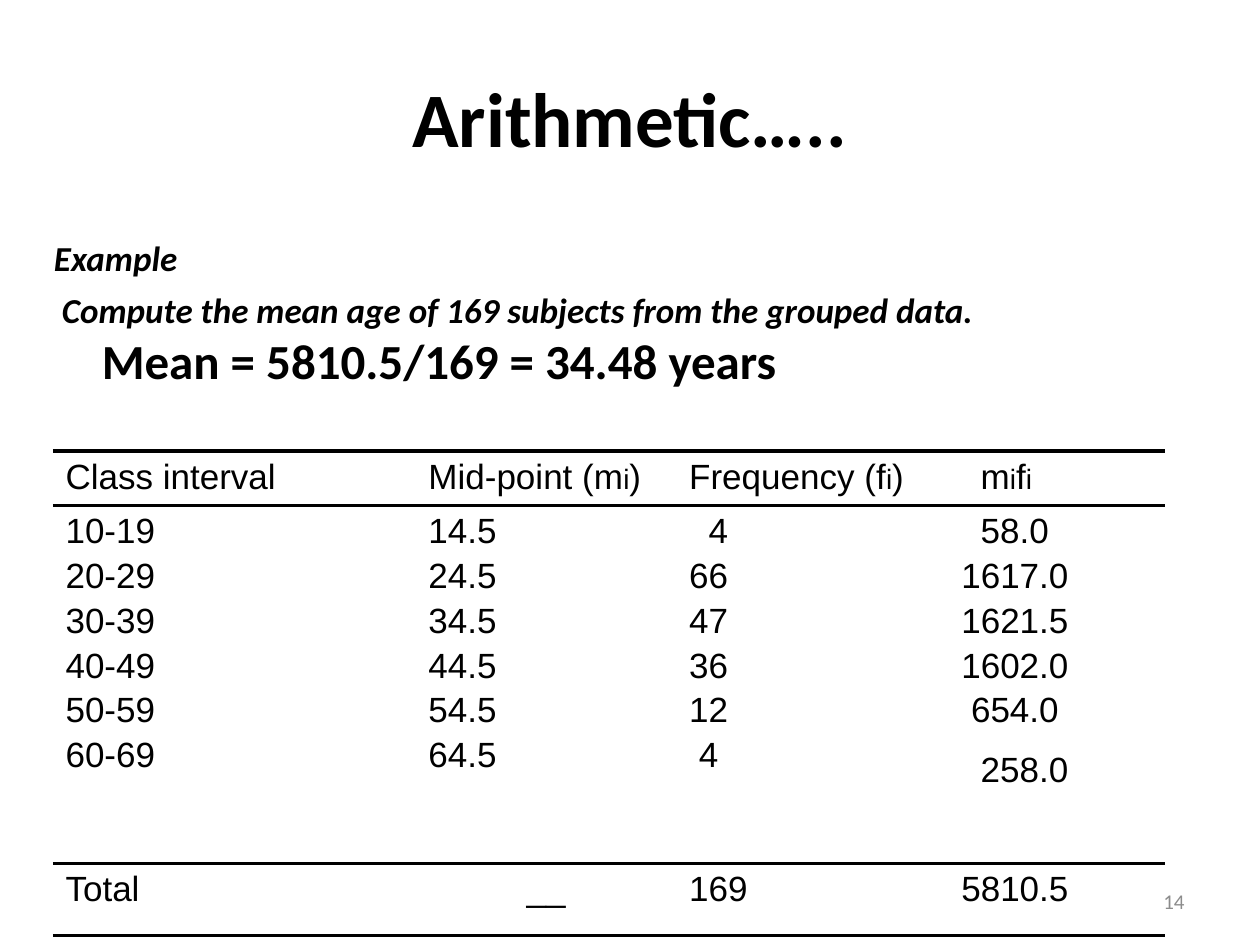
import pptx
import pptx.util
import pptx.dml.color
import pptx.enum.text
import pptx.oxml
import pptx.oxml.ns

Inches, Pt = pptx.util.Inches, pptx.util.Pt
ALIGN = pptx.enum.text.PP_ALIGN
ANCHOR = pptx.enum.text.MSO_ANCHOR

# Content: a paragraph is a list of (text, size) runs
title = "Arithmetic….."
lead = [
    [("Example", 20)],
    [(" Compute the mean age of 169 subjects from the grouped data.\v", 20),
     ("Mean = 5810.5/169 = 34.48 years", 28)],
]
heads = [
    [("Class interval", 20)],
    [("Mid-point (m", 20), ("i", 16), (")", 20)],
    [("Frequency (f", 20), ("i", 16), (")", 20)],
    [("m", 20), ("i", 16), ("f", 20), ("i", 16)],
]
data = [
    ("10-19", "14.5", "4", "58.0"),
    ("20-29", "24.5", "66", "1617.0"),
    ("30-39", "34.5", "47", "1621.5"),
    ("40-49", "44.5", "36", "1602.0"),
    ("50-59", "54.5", "12", "654.0"),
    ("60-69", "64.5", "4", "258.0"),
]
total = ("Total", "__", "169", "5810.5")
# Indents of the numbers, in steps of one digit gap
pads = {2: [2, 0, 0, 0, 0, 1], 3: [2, 0, 0, 0, 1, 2]}
step = 0.077
widths = [2.88, 2.07, 2.16, 1.72]
heights = [0.41, 2.84, 0.57]


def paint(text):
    return pptx.dml.color.RGBColor.from_string(text)


def put(frame, paras, font="Arial", color="000000", bold=False, ital=(),
        align=ALIGN.LEFT, gap=0, left=None, hang=0):
    """Write paragraphs; ital lists the sizes that are set in italics."""
    for n, runs in enumerate(paras):
        para = frame.paragraphs[0] if n == 0 else frame.add_paragraph()
        para.alignment = align
        para.space_before = Pt(gap if n else 0)
        props = para._p.get_or_add_pPr()
        props.set("marL", str(Inches(left[n] if left else 0)))
        props.set("indent", str(Inches(hang)))
        for text, size in runs:
            for k, part in enumerate(text.split("\v")):
                if k:
                    para.add_line_break()
                if part:
                    run = para.add_run()
                    run.text = part
                    run.font.name, run.font.size = font, Pt(size)
                    run.font.bold, run.font.italic = bold, size in ital
                    run.font.color.rgb = paint(color)


def box(slide, at, paras, anchor=ANCHOR.TOP, **form):
    frame = slide.shapes.add_textbox(*map(Inches, at)).text_frame
    frame.word_wrap = True
    frame.vertical_anchor = anchor
    put(frame, paras, **form)


def edge(cell, sides):
    """Rule the named sides in black and clear the others."""
    props = cell._tc.get_or_add_tcPr()
    space = pptx.oxml.ns.nsdecls("a")
    for n, side in enumerate("LRTB"):
        fill = ('<a:solidFill><a:srgbClr val="000000"/></a:solidFill>'
                if side in sides else "<a:noFill/>")
        props.insert(n, pptx.oxml.parse_xml(
            f'<a:ln{side} {space} w="{Pt(2.25)}">{fill}</a:ln{side}>'))


def main():
    deck = pptx.Presentation()
    deck.slide_width, deck.slide_height = Inches(10), Inches(7.5)
    slide = deck.slides.add_slide(deck.slide_layouts[6])

    # Title and example
    box(slide, (0.5, 0.3, 9, 1.25), [[(title, 44)]], anchor=ANCHOR.MIDDLE,
        font="Calibri", bold=True, align=ALIGN.CENTER)
    box(slide, (0.33, 1.83, 9.08, 1.6), lead, font="Calibri", bold=True,
        ital=(20,), gap=5.3, left=[0.38, 0.38], hang=-0.38)

    # Table of grouped data
    grid = slide.shapes.add_table(
        3, 4, Inches(0.42), Inches(3.58),
        Inches(sum(widths)), Inches(sum(heights))).table
    grid.first_row = grid.horz_banding = False
    for row, high in zip(grid.rows, heights):
        row.height = Inches(high)
    for c, wide in enumerate(widths):
        grid.columns[c].width = Inches(wide)
        cells = [grid.cell(r, c) for r in range(3)]
        for cell in cells:
            cell.fill.background()
            edge(cell, "TB")
        top, mid, end = [cell.text_frame for cell in cells]
        put(top, [heads[c]], left=[2 * step if c == 3 else 0])
        put(mid, [[(row[c], 20)] for row in data], gap=3.3,
            left=[n * step for n in pads.get(c, [0] * len(data))])
        put(end, [[(total[c], 20)]],
            align=ALIGN.CENTER if c == 1 else ALIGN.LEFT)
    # The last product sits a little lower
    grid.cell(1, 3).text_frame.paragraphs[-1].space_before = Pt(12)

    # Page number
    box(slide, (7.17, 6.95, 2.33, 0.4), [[("14", 12)]], anchor=ANCHOR.MIDDLE,
        font="Calibri", color="8C8C8C", align=ALIGN.RIGHT)

    deck.save("out.pptx")


if __name__ == "__main__":
    main()
